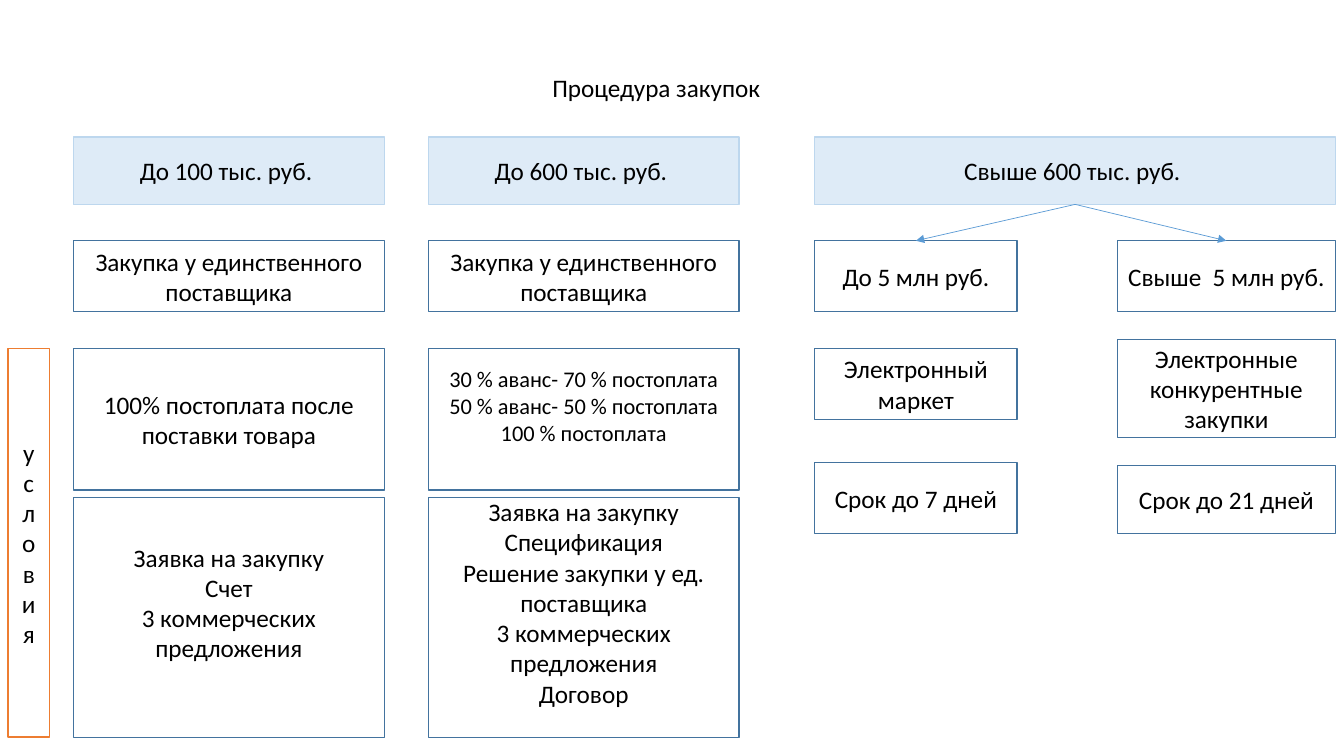
from lxml import etree
from pptx import Presentation
from pptx import util as u
from pptx.dml.color import RGBColor
from pptx.enum import shapes, text
from pptx.oxml import ns

# Content: column, row, lines of text
TITLE = "Процедура закупок"
LIMITS = [
    ("small", "limit", ["До 100 тыс. руб. "]),
    ("medium", "limit", ["До 600 тыс. руб. "]),
    ("large", "limit", ["Свыше 600 тыс. руб. "]),
]
STEPS = [
    ("small", "method", ["Закупка у единственного поставщика"]),
    ("small", "payment", ["100% постоплата после поставки товара"]),
    ("small", "papers", ["Заявка на закупку", "Счет", "3 коммерческих предложения"]),
    ("medium", "method", ["Закупка у единственного поставщика"]),
    ("medium", "payment", ["30 % аванс- 70 % постоплата", "50 % аванс- 50 % постоплата",
                           "100 % постоплата"]),
    ("medium", "papers", ["Заявка на закупку", "Спецификация", "Решение закупки у ед. поставщика",
                          "3 коммерческих предложения", "Договор"]),
    ("market", "method", ["До 5 млн руб."]),
    ("market", "market", ["Электронный маркет"]),
    ("market", "market term", ["Срок до 7 дней"]),
    ("tender", "method", ["Свыше  5 млн руб."]),
    ("tender", "tender", ["Электронные конкурентные закупки"]),
    ("tender", "tender term", ["Срок до 21 дней"]),
]
CONDITIONS = ("side", "conditions", ["условия"])

# Theme: colours, type sizes, box styles as (fill, line)
THEME = {
    "font": "Calibri", "ink": "000000", "size": 18, "small size": 16,
    "limit": ("DEEBF7", "BDD7EE"), "step": ("FFFFFF", "43739E"),
    "side": ("FFFFFF", "ED7D31"), "arrow": "5B9BD5",
}

# Layout in points: columns as (left, width), rows as (top, height)
COLUMNS = {"side": (5.8, 29.5), "small": (52.5, 222), "medium": (306, 222),
           "large": (582, 372), "market": (582, 144.5), "tender": (798, 156)}
ROWS = {"limit": (98, 48), "method": (172, 50.5), "payment": (249, 101),
        "papers": (355.5, 171.5), "conditions": (249, 277.5),
        "market": (249, 50.5), "market term": (330.5, 50.5),
        "tender": (242.5, 70), "tender term": (332.5, 48.5)}
INSET = 3.6
LINE_HEIGHT = 1.22

prs = Presentation()
prs.slide_width, prs.slide_height = u.Pt(960), u.Pt(540)
slide = prs.slides.add_slide(prs.slide_layouts[6])


def colour(key):
    return RGBColor.from_string(key)


def write(frame, lines, size, align, frame_format):
    for name, value in frame_format.items():
        setattr(frame, name, value)
    for index, line in enumerate(lines):
        paragraph = frame.paragraphs[0] if index == 0 else frame.add_paragraph()
        paragraph.alignment = align
        run = paragraph.add_run()
        run.text = line
        for name, value in {"name": THEME["font"], "size": u.Pt(size)}.items():
            setattr(run.font, name, value)
        run.font.color.rgb = colour(THEME["ink"])


def add_box(column, row, lines, style):
    (left, width), (top, height) = COLUMNS[column], ROWS[row]
    box = slide.shapes.add_shape(shapes.MSO_SHAPE.RECTANGLE,
                                 *map(u.Pt, (left, top, width, height)))
    fill, line = THEME[style]
    box.shadow.inherit = False
    box.fill.solid()
    box.fill.fore_color.rgb = colour(fill)
    box.line.color.rgb = colour(line)
    box.line.width = u.Pt(1)
    # Lists sit one line higher than the middle
    is_list = len(lines) > 1
    size = THEME["small size" if is_list and row == "payment" else "size"]
    bottom = INSET + (size * LINE_HEIGHT if is_list else 0)
    write(box.text_frame, lines, size, text.PP_ALIGN.CENTER, {
        "word_wrap": True, "vertical_anchor": text.MSO_ANCHOR.MIDDLE,
        "margin_top": u.Pt(INSET), "margin_bottom": u.Pt(bottom)})
    return box


def add_arrow(parent, child):
    arrow = slide.shapes.add_connector(shapes.MSO_CONNECTOR.STRAIGHT, 0, 0, 0, 0)
    arrow.begin_connect(parent, 2)
    arrow.end_connect(child, 0)
    arrow.line.color.rgb = colour(THEME["arrow"])
    arrow.line.width = u.Pt(0.5)
    etree.SubElement(arrow.line._get_or_add_ln(), ns.qn("a:tailEnd"), type="triangle")
    etree.SubElement(arrow._element.spPr, ns.qn("a:effectLst"))


# Title
title = slide.shapes.add_textbox(*map(u.Pt, (387.4, 48.2, 165, 29)))
write(title.text_frame, [TITLE], THEME["size"], text.PP_ALIGN.LEFT, {
    "word_wrap": False, "auto_size": text.MSO_AUTO_SIZE.SHAPE_TO_FIT_TEXT})

# Boxes
limits = {column: add_box(column, row, lines, "limit") for column, row, lines in LIMITS}
steps = {(column, row): add_box(column, row, lines, "step") for column, row, lines in STEPS}
add_box(*CONDITIONS, "side")

# Arrows from the largest limit to its two branches
for branch in ("market", "tender"):
    add_arrow(limits["large"], steps[branch, "method"])

prs.save("out.pptx")
